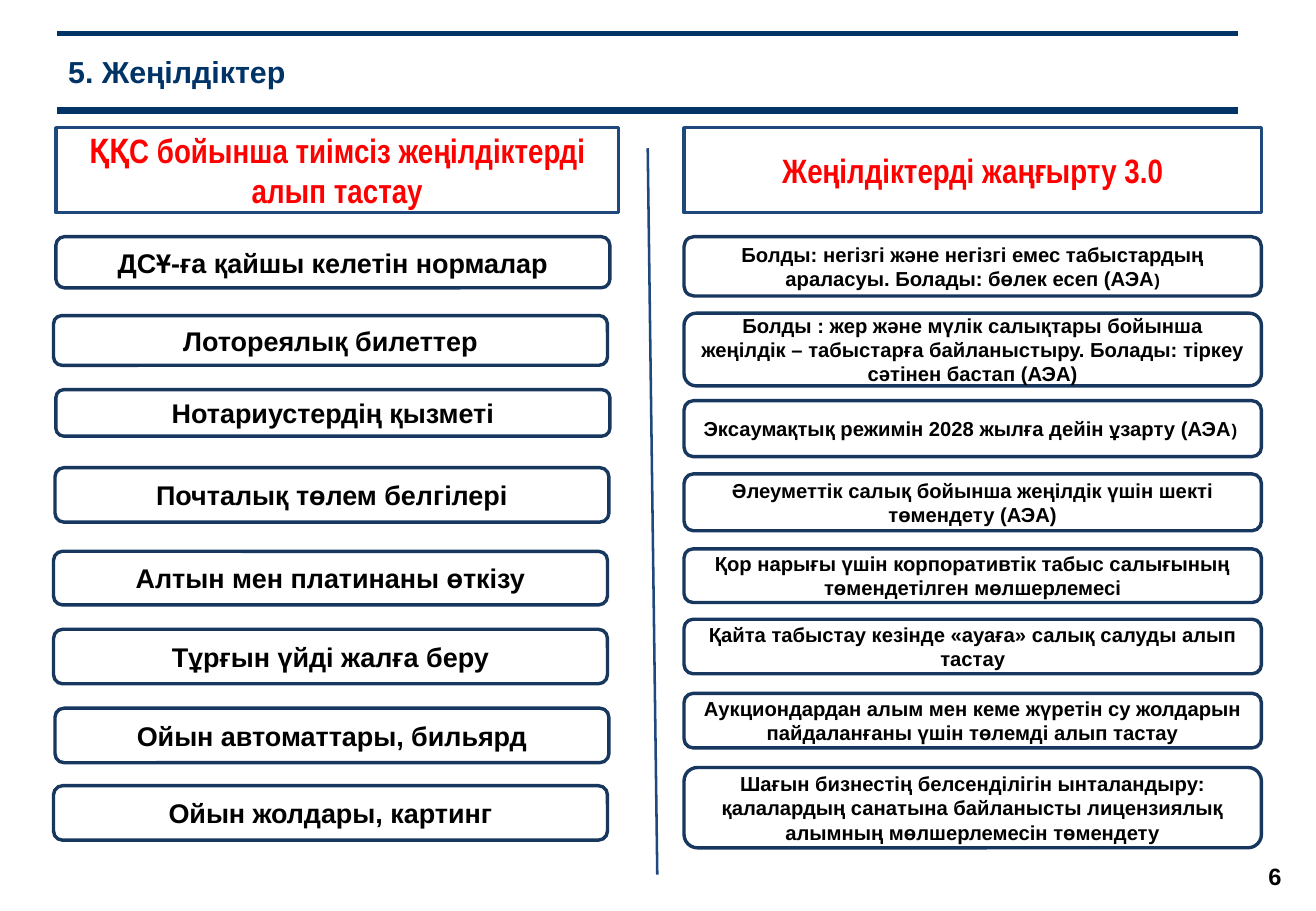
from collections import namedtuple

from lxml.etree import SubElement
from pptx import Presentation
from pptx.dml.color import RGBColor
from pptx.enum.shapes import MSO_CONNECTOR as Connector, MSO_SHAPE as Shape
from pptx.enum.text import MSO_ANCHOR as Anchor, MSO_AUTO_SIZE as AutoSize, PP_ALIGN as Align
from pptx.oxml.ns import qn
from pptx.util import Cm, Pt

COLORS = {
    "heading": "003366",
    "frame": "1F497D",
    "item": "17375E",
    "accent": "FF0000",
    "text": "000000",
    "paper": "FFFFFF",
}
Box = namedtuple("Box", "left top width height")
Item = namedtuple("Item", "shift offset height text tail", defaults=[""])

VAT_ITEMS = [
    Item(0, 2.28, 1.07, "ДСҰ-ға қайшы келетін нормалар"),
    Item(-0.05, 3.93, 1.04, "Лотореялық билеттер"),
    Item(0, 5.48, 0.97, "Нотариустердің қызметі"),
    Item(-0.02, 7.11, 1.14, "Почталық төлем белгілері"),
    Item(-0.05, 8.86, 1.12, "Алтын мен платинаны өткізу"),
    Item(-0.05, 10.49, 1.14, "Тұрғын үйді жалға беру"),
    Item(-0.02, 12.14, 1.14, "Ойын автоматтары, бильярд"),
    Item(-0.05, 13.76, 1.14, "Ойын жолдары, картинг"),
]
RENEWAL_ITEMS = [
    Item(0, 2.28, 1.24, "Болды: негізгі және негізгі емес табыстардың араласуы. "
         "Болады: бөлек есеп (АЭА", ")"),
    Item(0, 3.88, 1.52, "Болды : жер және мүлік салықтары бойынша жеңілдік – табыстарға "
         "байланыстыру. Болады: тіркеу сәтінен бастап (АЭА)"),
    Item(0, 5.71, 1.17, "Эксаумақтық режимін 2028 жылға дейін ұзарту (АЭА", ") "),
    Item(0, 7.24, 1.19, "Әлеуметтік салық бойынша жеңілдік үшін шекті төмендету (АЭА)"),
    Item(0, 8.81, 1.12, "Қор нарығы үшін корпоративтік табыс салығының төмендетілген мөлшерлемесі"),
    Item(0, 10.28, 1.14, "Қайта табыстау кезінде «ауаға» салық салуды алып тастау"),
    Item(0, 11.83, 1.14, "Аукциондардан алым мен кеме жүретін су жолдарын пайдаланғаны "
         "үшін төлемді алып тастау"),
    Item(0, 13.38, 1.68, "Шағын бизнестің белсенділігін ынталандыру: қалалардың санатына "
         "байланысты лицензиялық алымның мөлшерлемесін төмендету"),
]


def color(name):
    """Return the named colour."""
    return RGBColor.from_string(COLORS[name])


def format_span(span, size, ink, font="Arial"):
    """Format one run of bold text."""
    span.font.name = font
    span.font.size = Pt(size)
    span.font.bold = True
    span.font.color.rgb = color(ink)


def place(shape, box):
    """Move a shape to a box given in centimetres."""
    shape.left, shape.top, shape.width, shape.height = map(Cm, box)


def add_rule(page, start, end, ink, weight):
    """Draw a straight line without a shadow."""
    rule = page.shapes.add_connector(Connector.STRAIGHT, *map(Cm, start + end))
    rule.line.color.rgb = color(ink)
    rule.line.width = Pt(weight)
    SubElement(rule._element.spPr, qn("a:effectLst"))


def add_panel(page, kind, box, text, size, ink="text", font="Arial", border=None, tail=""):
    """Add a white panel with centred text and an optional smaller tail."""
    panel = page.shapes.add_shape(kind, *map(Cm, box))
    panel.shadow.inherit = False
    panel.fill.solid()
    panel.fill.fore_color.rgb = color("paper")
    if border:
        panel.line.color.rgb = color(border)
        panel.line.width = Pt(2)
    else:
        panel.line.fill.background()
    frame = panel.text_frame
    frame.word_wrap = True
    frame.vertical_anchor = Anchor.MIDDLE
    para = frame.paragraphs[0]
    para.text = text
    para.alignment = Align.CENTER
    format_span(para.runs[0], size, ink, font)
    if tail:
        span = para.add_run()
        span.text = tail
        format_span(span, size - 2, ink, font)


def add_heading(page, box, text):
    """Place the slide title between two rules."""
    right = box.left + box.width
    bottom = box.top + box.height
    add_rule(page, (box.left, box.top), (right, box.top), "heading", 3)
    add_rule(page, (box.left, bottom), (right, bottom), "heading", 4.5)
    title = page.shapes.title
    place(title, Box(box.left - 0.02, box.top + 0.23, box.width + 0.5, 1.12))
    frame = title.text_frame
    frame.text = text
    frame.word_wrap = True
    frame.auto_size = AutoSize.NONE
    frame.vertical_anchor = Anchor.MIDDLE
    frame.paragraphs[0].alignment = Align.LEFT
    format_span(frame.paragraphs[0].runs[0], 18, "heading")


def add_column(page, box, heading, items, item_width, size):
    """Place a column heading with its list of rounded items."""
    add_panel(page, Shape.RECTANGLE, Box(box.left, box.top, box.width, 1.78), heading, 20,
              "accent", "Arial Narrow", "frame")
    for item in items:
        spot = Box(box.left + item.shift, box.top + item.offset, item_width, item.height)
        add_panel(page, Shape.ROUNDED_RECTANGLE, spot, item.text, size,
                  border="item", tail=item.tail)


def main():
    """Build the deck and save it."""
    deck = Presentation()
    deck.slide_width, deck.slide_height = Cm(27.51), Cm(19.05)
    page = deck.slides.add_slide(deck.slide_layouts[5])
    add_heading(page, Box(1.19, 0.71, 24.69, 1.6), "5. Жеңілдіктер")
    add_panel(page, Shape.RECTANGLE, Box(25.83, 17.63, 1.65, 1.4), "6", 14)
    add_rule(page, (13.54, 3.1), (13.74, 18.29), "frame", 1.5)
    add_column(page, Box(1.17, 2.67, 11.76, 14.9),
               "ҚҚС бойынша тиімсіз жеңілдіктерді алып тастау", VAT_ITEMS, 11.58, 16)
    add_column(page, Box(14.3, 2.67, 12.07, 15.06),
               "Жеңілдіктерді жаңғырту 3.0", RENEWAL_ITEMS, 12.07, 12)
    deck.save("out.pptx")


if __name__ == "__main__":
    main()
